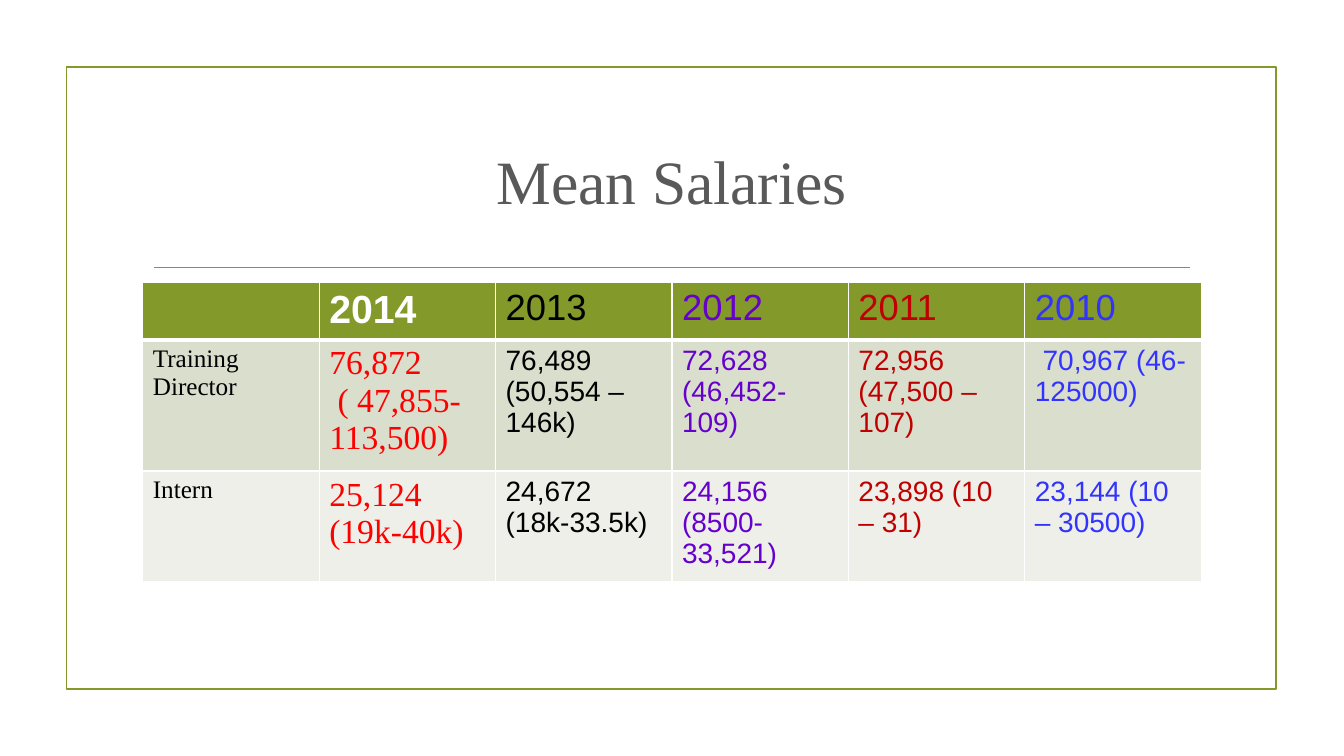
from dataclasses import dataclass

from lxml import etree
from pptx import Presentation
from pptx import util as u
from pptx.dml import color
from pptx.enum import shapes, text
from pptx.oxml import ns


@dataclass(frozen=True)
class Theme:
    """Colours, fonts and type sizes of the slide."""
    olive: str = "83992A"
    white: str = "FFFFFF"
    black: str = "000000"
    grey: str = "595959"
    red: str = "FF0000"
    years: tuple = ("000000", "6600CC", "C00000", "3333FF")
    bands: tuple = ("83992A", "D9DECD", "EDEFE8")
    serif: str = "Times New Roman"
    sans: str = "Arial"
    title: int = 44
    latest_year: int = 28
    year: int = 26
    latest: int = 24
    value: int = 20
    label: int = 18
    rule: float = 1.25


THEME = Theme()
COLUMN_WIDTH = 126
ROW_HEIGHTS = (38.5, 87, 74)
ROWS = (
    ("", "2014", "2013", "2012", "2011", "2010"),
    ("Training Director", "76,872\n ( 47,855- 113,500)", "76,489 (50,554 – 146k)",
     "72,628 (46,452-109)", "72,956 (47,500 – 107)", " 70,967 (46- 125000)"),
    ("Intern", "25,124 (19k-40k)", "24,672 (18k-33.5k)",
     "24,156 (8500-33,521)", "23,898 (10 – 31)", "23,144 (10 – 30500)"),
)


def style(size, name, ink, bold=False):
    """Return the format values of a piece of text."""
    return {"size": u.Pt(size), "name": name, "bold": bold, "ink": ink}


def write(frame, words, values, align=text.PP_ALIGN.LEFT):
    """Fill a text frame with one paragraph per line of words."""
    for index, line in enumerate(words.split("\n")):
        para = frame.add_paragraph() if index else frame.paragraphs[0]
        para.alignment = align
        span = para.add_run()
        span.text = line
        for key, value in values.items():
            if key == "ink":
                span.font.color.rgb = color.RGBColor.from_string(value)
            else:
                setattr(span.font, key, value)


def outline(shape):
    """Give a shape or connector the olive rule."""
    shape.line.color.rgb = color.RGBColor.from_string(THEME.olive)
    shape.line.width = u.Pt(THEME.rule)


def add_frame(page):
    """Draw the open rectangle around the content."""
    box = page.shapes.add_shape(shapes.MSO_SHAPE.RECTANGLE,
                                u.Pt(47.5), u.Pt(48), u.Pt(864), u.Pt(444))
    box.shadow.inherit = False
    box.fill.background()
    outline(box)


def add_rule(page):
    """Draw the line below the title."""
    rule = page.shapes.add_connector(shapes.MSO_CONNECTOR.STRAIGHT,
                                     u.Pt(110), u.Pt(191), u.Pt(850), u.Pt(191))
    outline(rule)
    etree.SubElement(rule._element.spPr, ns.qn("a:effectLst"))


def add_title(page, words):
    """Place the centred title."""
    box = page.shapes.add_textbox(u.Pt(102), u.Pt(77), u.Pt(756), u.Pt(103))
    frame = box.text_frame
    frame.word_wrap = True
    frame.vertical_anchor = text.MSO_ANCHOR.MIDDLE
    write(frame, words, style(THEME.title, THEME.serif, THEME.grey),
          text.PP_ALIGN.CENTER)


def add_borders(cell, widths):
    """Edge a cell in white with the given left, right, top and bottom widths."""
    props = cell._tc.get_or_add_tcPr()
    for index, (side, width) in enumerate(zip("LRTB", widths)):
        edge = etree.Element(ns.qn(f"a:ln{side}"), w=str(u.Pt(width)))
        fill = etree.SubElement(edge, ns.qn("a:solidFill"))
        etree.SubElement(fill, ns.qn("a:srgbClr"), val=THEME.white)
        props.insert(index, edge)


def cell_style(row, column):
    """Choose the text format from the place in the table."""
    if column == 0:
        return style(THEME.label, THEME.serif, THEME.black)
    if column == 1:
        if row == 0:
            return style(THEME.latest_year, THEME.sans, THEME.white, True)
        return style(THEME.latest, THEME.serif, THEME.red)
    size = THEME.value if row else THEME.year
    return style(size, THEME.sans, THEME.years[column - 2])


def add_salaries(page):
    """Build the salary table."""
    columns = len(ROWS[0])
    table = page.shapes.add_table(len(ROWS), columns, u.Pt(102), u.Pt(202),
                                  u.Pt(COLUMN_WIDTH * columns),
                                  u.Pt(sum(ROW_HEIGHTS))).table
    for column in table.columns:
        column.width = u.Pt(COLUMN_WIDTH)
    for row, words in enumerate(ROWS):
        table.rows[row].height = u.Pt(ROW_HEIGHTS[row])
        for column, content in enumerate(words):
            cell = table.cell(row, column)
            cell.fill.solid()
            cell.fill.fore_color.rgb = color.RGBColor.from_string(THEME.bands[row])
            add_borders(cell, (1, 1, 3 if row == 1 else 1, 3 if row == 0 else 1))
            if content:
                write(cell.text_frame, content, cell_style(row, column))


def main():
    """Build and save the deck."""
    deck = Presentation()
    deck.slide_width, deck.slide_height = u.Pt(960), u.Pt(540)
    page = deck.slides.add_slide(deck.slide_layouts[6])
    add_frame(page)
    add_rule(page)
    add_title(page, "Mean Salaries")
    add_salaries(page)
    deck.save("out.pptx")


if __name__ == "__main__":
    main()
